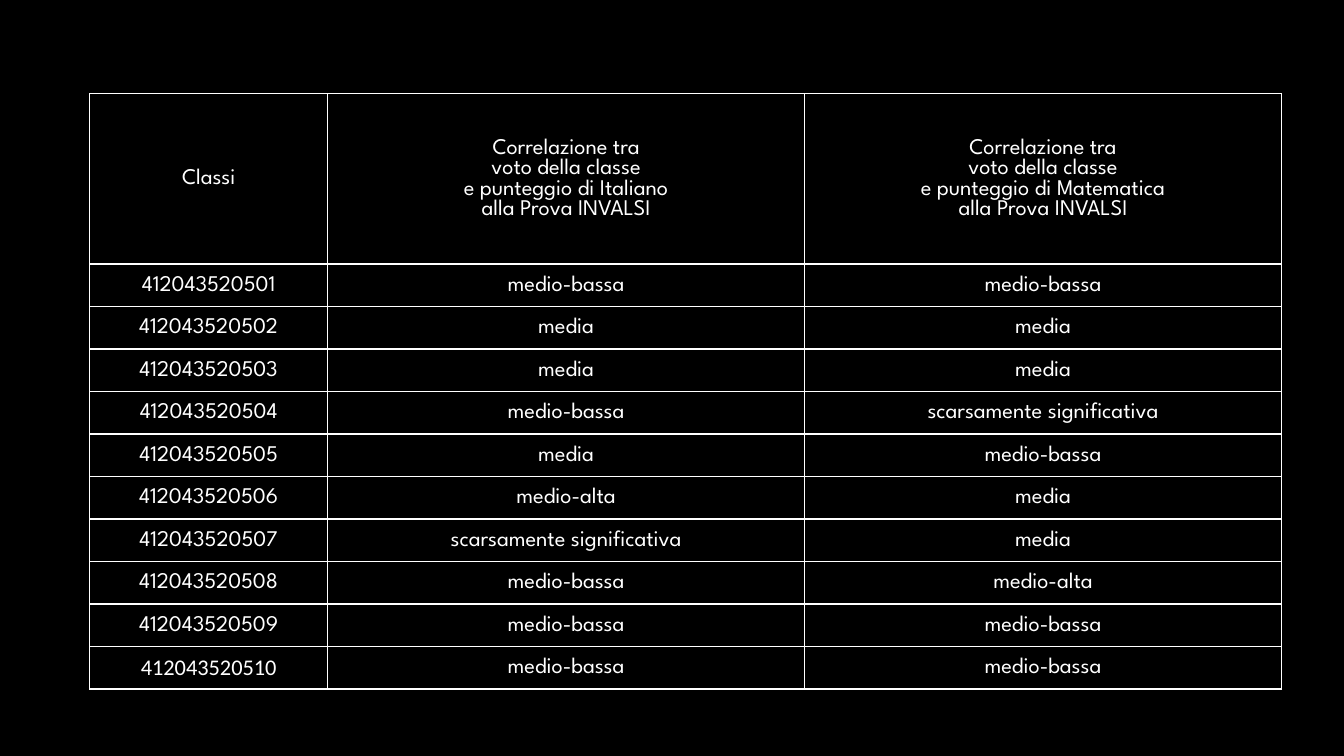
from copy import deepcopy

from lxml import etree
from pptx import Presentation
from pptx.dml.color import RGBColor
from pptx.enum.text import MSO_ANCHOR, PP_ALIGN
from pptx.oxml.ns import qn
from pptx.util import Inches, Pt

MIDDLE = MSO_ANCHOR.MIDDLE
CENTER = PP_ALIGN.CENTER

HEADING = "Correlazione tra\nvoto della classe\ne punteggio di {}\nalla Prova INVALSI"
HEADINGS = ("Classi", HEADING.format("Italiano"), HEADING.format("Matematica"))
CLASSES = [
    ("412043520501", "medio-bassa", "medio-bassa"),
    ("412043520502", "media", "media"),
    ("412043520503", "media", "media"),
    ("412043520504", "medio-bassa", "scarsamente significativa"),
    ("412043520505", "media", "medio-bassa"),
    ("412043520506", "medio-alta", "media"),
    ("412043520507", "scarsamente significativa", "media"),
    ("412043520508", "medio-bassa", "medio-alta"),
    ("412043520509", "medio-bassa", "medio-bassa"),
    ("412043520510", "medio-bassa", "medio-bassa"),
]
FONT = "League Spartan"
FONT_BY_TEXT = {"412043520510": "Calibri"}
BLACK, WHITE = "000000", "FFFFFF"

LEFT, TOP, WIDTH, HEIGHT = 0.89, 0.93, 11.82, 5.91
COLUMN_WIDTHS = (2.36, 4.73, 4.73)
HEADING_HEIGHT = 1.69
CLASS_HEIGHT = (HEIGHT - HEADING_HEIGHT) / len(CLASSES)
CELL_FORMAT = {
    "vertical_anchor": MIDDLE,
    "margin_left": Inches(0.01),
    "margin_top": Inches(0.01),
    "margin_right": Inches(0.01),
    "margin_bottom": 0,
}


def color(value):
    return RGBColor.from_string(value)


def add_borders(cell):
    """Draw a 1 pt white line on all four sides; call before filling the cell."""
    properties = cell._tc.get_or_add_tcPr()
    for side in ("lnL", "lnR", "lnT", "lnB"):
        line = etree.SubElement(properties, qn(f"a:{side}"), w=str(Pt(1)))
        fill = etree.SubElement(line, qn("a:solidFill"))
        etree.SubElement(fill, qn("a:srgbClr"), val=WHITE)


def write_cell(cell, text):
    for name, value in CELL_FORMAT.items():
        setattr(cell, name, value)
    add_borders(cell)
    cell.fill.background()

    paragraph = cell.text_frame.paragraphs[0]
    paragraph.text = text
    paragraph.alignment = CENTER
    for run in paragraph.runs:
        run.font.name = FONT_BY_TEXT.get(text, FONT)
        run.font.size = Pt(16)
        run.font.color.rgb = color(WHITE)
    # Line breaks need the run format too, or they stretch the line
    run_format = paragraph.runs[0].font._element
    for line_break in paragraph._p.findall(qn("a:br")):
        line_break.append(deepcopy(run_format))


def main():
    prs = Presentation()
    prs.slide_width, prs.slide_height = Inches(13.33), Inches(7.5)
    slide = prs.slides.add_slide(prs.slide_layouts[6])
    slide.background.fill.solid()
    slide.background.fill.fore_color.rgb = color(BLACK)

    rows = [HEADINGS, *CLASSES]
    table = slide.shapes.add_table(
        len(rows), len(HEADINGS),
        Inches(LEFT), Inches(TOP), Inches(WIDTH), Inches(HEIGHT),
    ).table
    table.first_row = table.horz_banding = False
    for column, width in zip(table.columns, COLUMN_WIDTHS):
        column.width = Inches(width)
    for index, texts in enumerate(rows):
        table.rows[index].height = Inches(CLASS_HEIGHT if index else HEADING_HEIGHT)
        for cell, text in zip(table.rows[index].cells, texts):
            write_cell(cell, text)

    prs.save("out.pptx")


if __name__ == "__main__":
    main()
